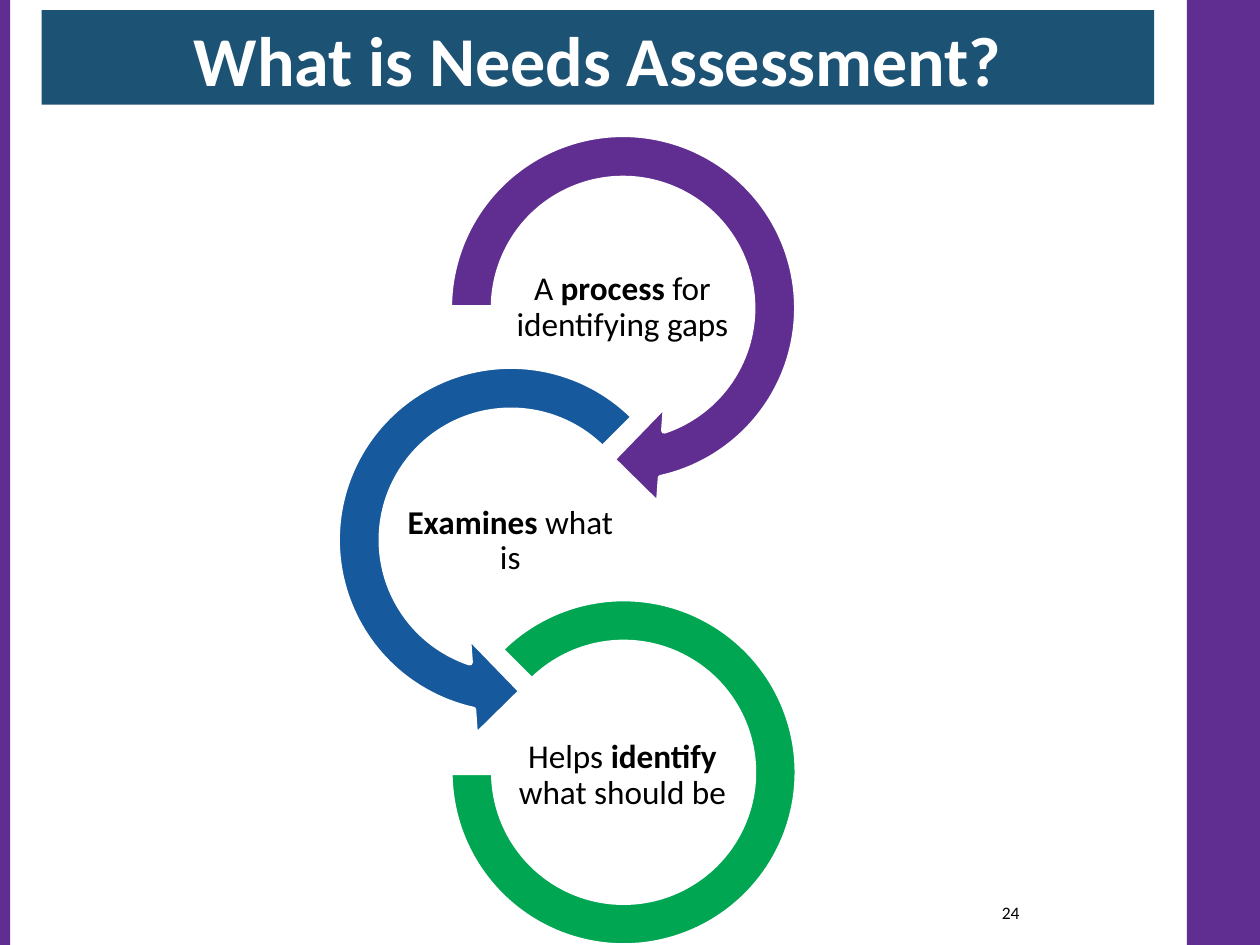
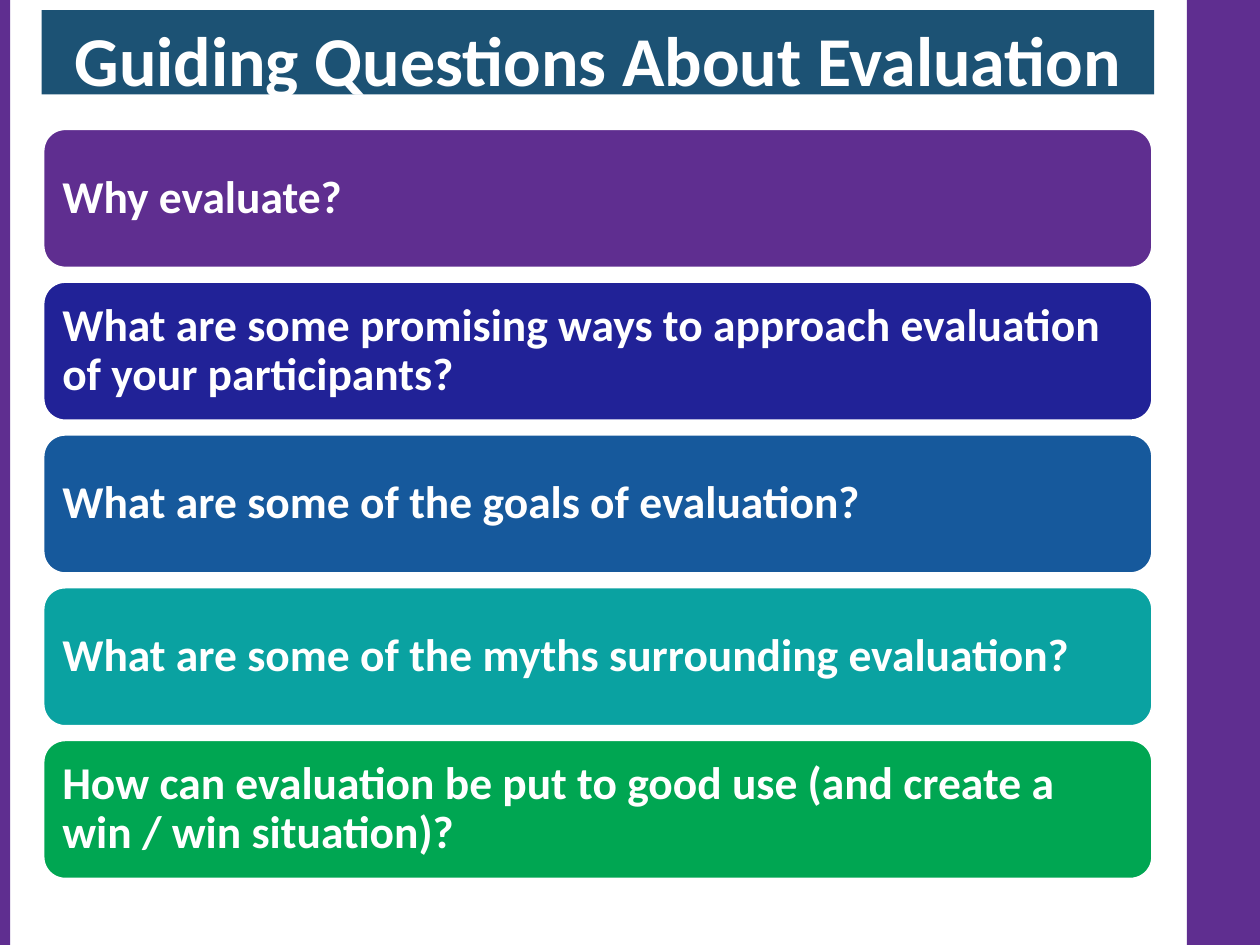
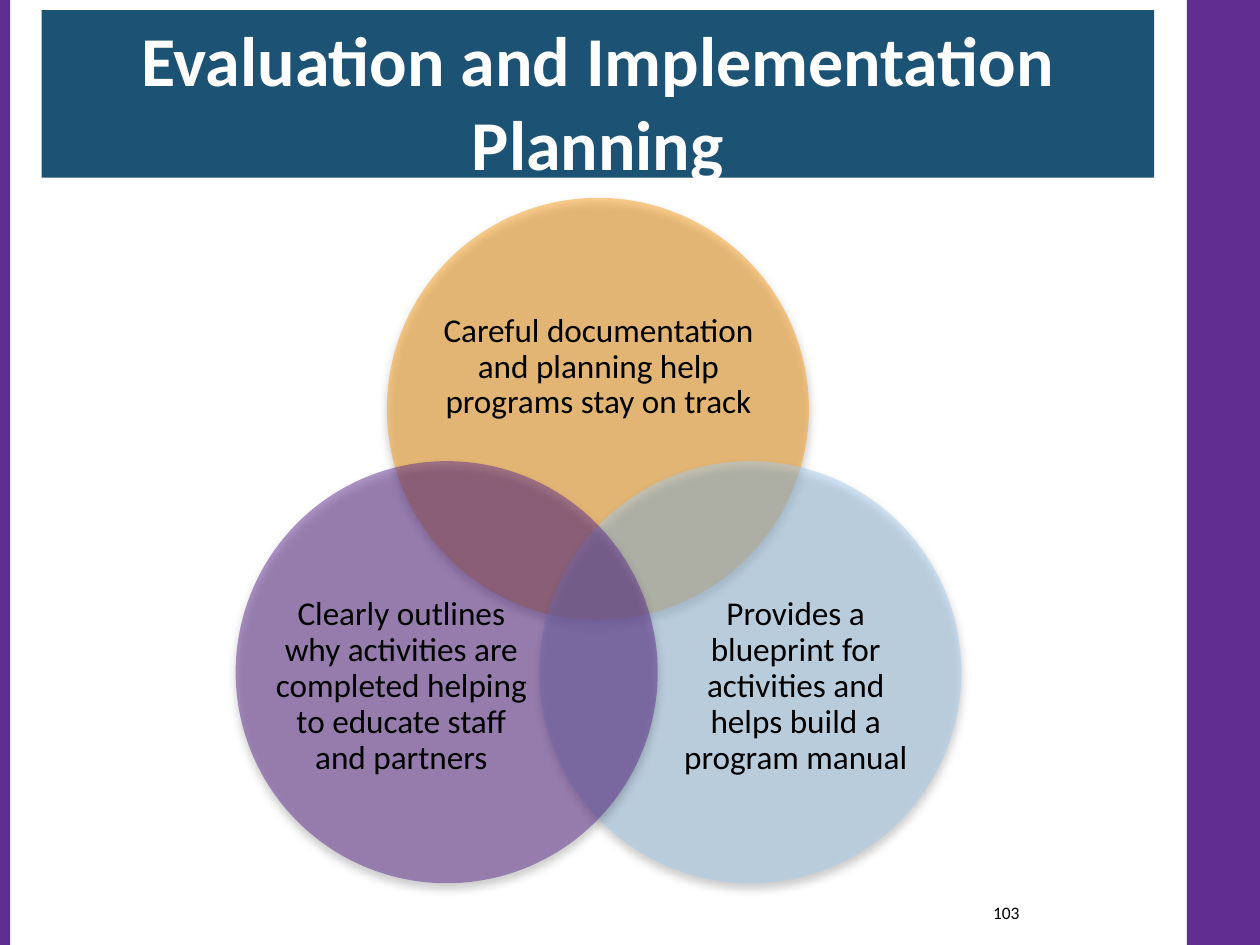
from dataclasses import dataclass

from lxml import etree
from pptx import Presentation
from pptx.dml.color import RGBColor
from pptx.enum.shapes import MSO_SHAPE
from pptx.enum.text import MSO_ANCHOR, MSO_AUTO_SIZE, PP_ALIGN
from pptx.oxml import parse_xml
from pptx.oxml.ns import nsdecls, qn
from pptx.presentation import Presentation as Deck
from pptx.shapes.autoshape import Shape
from pptx.slide import Slide
from pptx.text.text import TextFrame
from pptx.util import Inches, Pt

FONT = "Calibri"
PURPLE = RGBColor(0x5F, 0x2E, 0x90)
TITLE_BLUE = RGBColor(0x1C, 0x52, 0x74)
INDIGO = RGBColor(0x21, 0x22, 0x97)
BLUE = RGBColor(0x16, 0x59, 0x9C)
TEAL = RGBColor(0x0A, 0xA2, 0xA1)
GREEN = RGBColor(0x00, 0xA6, 0x52)
ORANGE = RGBColor(0xF8, 0x9F, 0x1E)
SKY = RGBColor(0xA7, 0xCD, 0xED)
WHITE = RGBColor(0xFF, 0xFF, 0xFF)
BLACK = RGBColor(0x00, 0x00, 0x00)

CONTENT_LEFT, CONTENT_WIDTH = 0.33, 8.83
TITLE_ONLY = 5


@dataclass(frozen=True)
class Box:
    left: float
    top: float
    width: float
    height: float

    def emu(self) -> tuple[int, int, int, int]:
        return (Inches(self.left), Inches(self.top),
                Inches(self.width), Inches(self.height))


@dataclass(frozen=True)
class Words:
    text: str
    bold: bool = False


@dataclass(frozen=True)
class Step:
    kind: MSO_SHAPE
    box: Box
    adjustments: tuple[float, ...]
    color: RGBColor
    label: Box
    words: tuple[Words, ...]


@dataclass(frozen=True)
class Question:
    text: str
    color: RGBColor


@dataclass(frozen=True)
class Circle:
    left: float
    top: float
    color: RGBColor
    label: Box
    text: str


BANDS = (Box(9.42, 0, 0.58, 7.5), Box(0, 0, 0.08, 7.5))

STEPS = (
    Step(MSO_SHAPE.CIRCULAR_ARROW, Box(3.34, 0.84, 3.21, 3.21),
         (0.11, 11.423, 45, 108, 0.125), PURPLE, Box(4.05, 2, 1.78, 0.89),
         (Words("A "), Words("process", True), Words(" for identifying gaps"))),
    Step(MSO_SHAPE.LEFT_CIRCULAR_ARROW, Box(2.45, 2.68, 3.21, 3.21),
         (0.11, 11.423, 63, 189, 0.125), BLUE, Box(3.16, 3.85, 1.78, 0.89),
         (Words("Examines", True), Words(" what is"))),
    Step(MSO_SHAPE.BLOCK_ARC, Box(3.57, 4.75, 2.76, 2.76),
         (135, 108, 0.127), GREEN, Box(4.05, 5.71, 1.78, 0.89),
         (Words("Helps "), Words("identify", True), Words(" what should be"))),
)

QUESTIONS = (
    Question("Why evaluate?", PURPLE),
    Question("What are some promising ways to approach evaluation of your participants?", INDIGO),
    Question("What are some of the goals of evaluation?", BLUE),
    Question("What are some of the myths surrounding evaluation?", TEAL),
    Question("How can evaluation be put to good use (and create a win / win situation)?", GREEN),
)
FIRST_QUESTION_TOP, LAST_QUESTION_TOP, QUESTION_HEIGHT = 1.01, 5.86, 1.13

CIRCLE_SIZE = 3.35
CIRCLES = (
    Circle(3.07, 1.57, ORANGE, Box(3.52, 2.16, 2.46, 1.51),
           "Careful documentation and planning help programs stay on track"),
    Circle(4.28, 3.66, SKY, Box(5.31, 4.53, 2.01, 1.84),
           "Provides a blueprint for activities and helps build a program manual"),
    Circle(1.87, 3.66, PURPLE, Box(2.18, 4.53, 2.01, 1.84),
           "Clearly outlines why activities are completed helping to educate staff and partners"),
)


# Shared drawing helpers
def write(frame: TextFrame, words: tuple[Words, ...], size: float, color: RGBColor,
          align: PP_ALIGN, anchor: MSO_ANCHOR = MSO_ANCHOR.MIDDLE,
          line_spacing: float = 0.9, inset: float | None = None) -> None:
    frame.word_wrap = True
    frame.auto_size = MSO_AUTO_SIZE.NONE
    frame.vertical_anchor = anchor
    if inset is not None:
        frame.margin_left = frame.margin_right = Inches(inset)
        frame.margin_top = frame.margin_bottom = Inches(inset)
    paragraph = frame.paragraphs[0]
    paragraph.alignment = align
    paragraph.line_spacing = line_spacing
    for part in words:
        run = paragraph.add_run()
        run.text = part.text
        run.font.name = FONT
        run.font.size = Pt(size)
        run.font.bold = part.bold
        run.font.color.rgb = color


def add_label(slide: Slide, box: Box, words: tuple[Words, ...], inset: float) -> None:
    label = slide.shapes.add_textbox(*box.emu())
    write(label.text_frame, words, 19, BLACK, PP_ALIGN.CENTER, inset=inset)


def add_filled(slide: Slide, kind: MSO_SHAPE, box: Box, color: RGBColor,
               outlined: bool = False) -> Shape:
    shape = slide.shapes.add_shape(kind, *box.emu())
    shape.shadow.inherit = False
    shape.fill.solid()
    shape.fill.fore_color.rgb = color
    if outlined:
        shape.line.color.rgb = WHITE
        shape.line.width = Pt(3.35)
    else:
        shape.line.fill.background()
    return shape


def make_translucent(shape: Shape) -> None:
    """Halve the fill's opacity and add a soft shadow below the shape."""
    properties = shape.element.spPr
    color = properties.find(qn("a:solidFill")).find(qn("a:srgbClr"))
    etree.SubElement(color, qn("a:alpha"), val="50000")
    properties.find(qn("a:effectLst")).append(parse_xml(
        f'<a:outerShdw {nsdecls("a")} blurRad="{Pt(5.2)}" dist="{Pt(3)}" dir="5400000" '
        'rotWithShape="0"><a:srgbClr val="000000"><a:alpha val="40000"/></a:srgbClr>'
        '</a:outerShdw>'))


def add_titled_slide(deck: Deck, title: str, title_height: float) -> Slide:
    slide = deck.slides.add_slide(deck.slide_layouts[TITLE_ONLY])
    heading = slide.shapes.title
    heading.left, heading.top, heading.width, heading.height = Box(
        CONTENT_LEFT, 0.08, CONTENT_WIDTH, title_height).emu()
    heading.fill.solid()
    heading.fill.fore_color.rgb = TITLE_BLUE
    write(heading.text_frame, (Words(title, True),), 40, WHITE, PP_ALIGN.CENTER,
          MSO_ANCHOR.TOP, line_spacing=1.0)
    heading.text_frame.paragraphs[0].space_before = Pt(2)
    return slide


def add_page_number(slide: Slide, number: int) -> None:
    footer = slide.shapes.add_textbox(*Box(7.11, 7.08, 1.08, 0.33).emu())
    write(footer.text_frame, (Words(str(number)),), 10, BLACK, PP_ALIGN.RIGHT,
          line_spacing=1.0)


def move_bands_to_layout(slide: Slide) -> None:
    for box in BANDS:
        band = add_filled(slide, MSO_SHAPE.RECTANGLE, box, PURPLE)
        slide.slide_layout.shapes.element.append(band.element)


# Slides
def build_needs_assessment(deck: Deck) -> None:
    slide = add_titled_slide(deck, "What is Needs Assessment?", 0.75)
    move_bands_to_layout(slide)
    for step in STEPS:
        arc = add_filled(slide, step.kind, step.box, step.color, outlined=True)
        for index, value in enumerate(step.adjustments):
            arc.adjustments[index] = value
        add_label(slide, step.label, step.words, 0.01)
    add_page_number(slide, 24)


def build_guiding_questions(deck: Deck) -> None:
    slide = add_titled_slide(deck, "Guiding Questions About Evaluation", 0.67)
    pitch = (LAST_QUESTION_TOP - FIRST_QUESTION_TOP) / (len(QUESTIONS) - 1)
    for index, question in enumerate(QUESTIONS):
        box = Box(CONTENT_LEFT, FIRST_QUESTION_TOP + index * pitch,
                  CONTENT_WIDTH, QUESTION_HEIGHT)
        bar = add_filled(slide, MSO_SHAPE.ROUNDED_RECTANGLE, box, question.color,
                         outlined=True)
        write(bar.text_frame, (Words(question.text, True),), 26, WHITE,
              PP_ALIGN.LEFT, inset=0.11)


def build_implementation_planning(deck: Deck) -> None:
    slide = add_titled_slide(deck, "Evaluation and Implementation Planning", 1.33)
    for circle in CIRCLES:
        box = Box(circle.left, circle.top, CIRCLE_SIZE, CIRCLE_SIZE)
        make_translucent(add_filled(slide, MSO_SHAPE.OVAL, box, circle.color))
        add_label(slide, circle.label, (Words(circle.text),), 0)
    add_page_number(slide, 103)


def main() -> None:
    deck = Presentation()
    deck.slide_width, deck.slide_height = Inches(10), Inches(7.5)
    build_needs_assessment(deck)
    build_guiding_questions(deck)
    build_implementation_planning(deck)
    deck.save("out.pptx")


if __name__ == "__main__":
    main()
